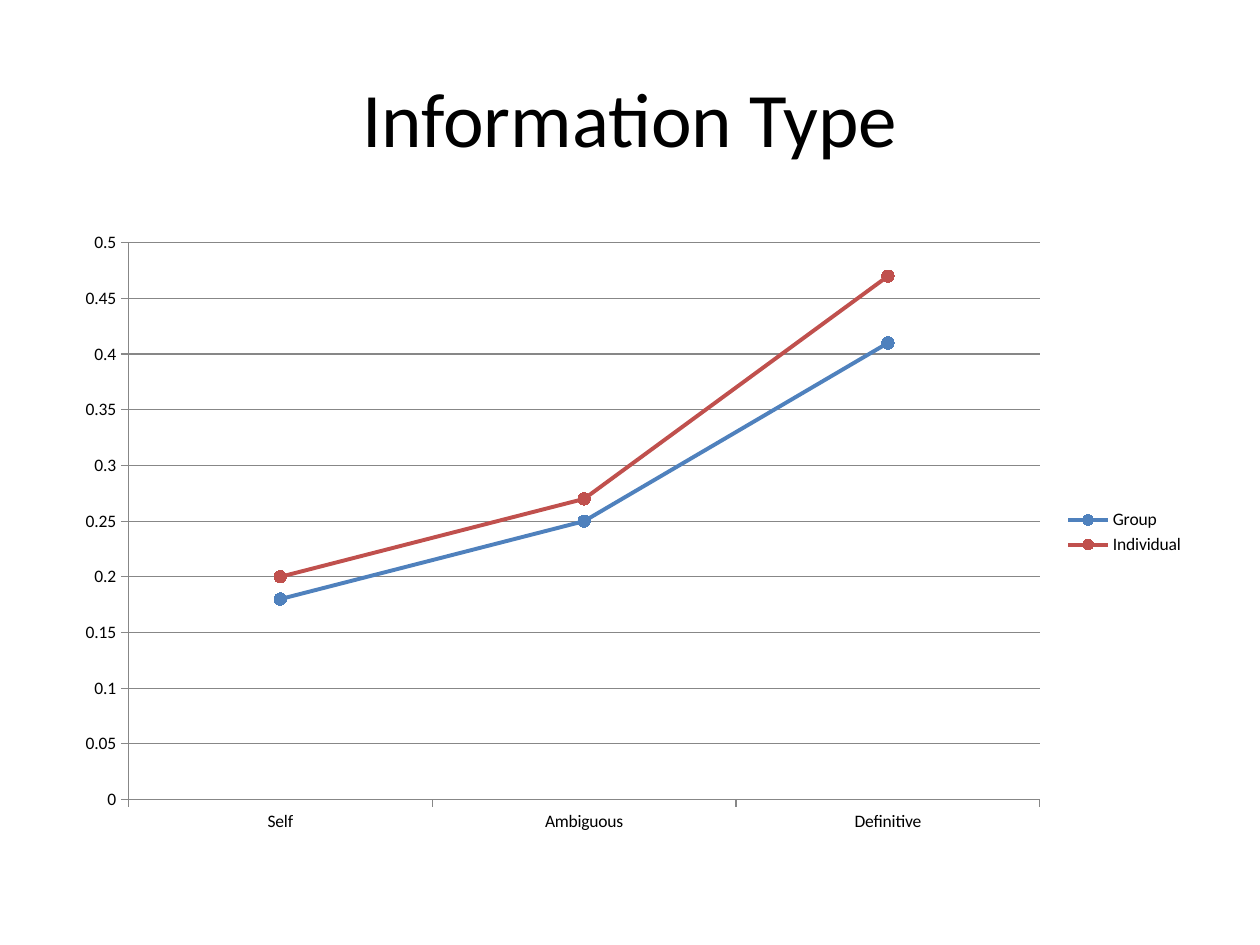
from pptx import Presentation
from pptx.chart.data import CategoryChartData
from pptx.dml.color import RGBColor
from pptx.enum import chart as charts, text
from pptx.util import Pt

TITLE = "Information Type"
CATEGORIES = ["Self", "Ambiguous", "Definitive"]
SERIES = [
    ("Group", [0.18, 0.25, 0.41], "4F81BD"),
    ("Individual", [0.2, 0.27, 0.47], "C0504D"),
]
FONT, BLACK, GRAY = "Calibri", "000000", "878787"
PAGE_WIDTH, PAGE_HEIGHT, MARGIN = 720, 540, 36
CONTENT_WIDTH = PAGE_WIDTH - 2 * MARGIN
TITLE_TOP, TITLE_HEIGHT = 21.6, 90
CHART_TOP, CHART_HEIGHT = 126, 356.4


def paint(color_format, color):
    color_format.rgb = RGBColor.from_string(color)


def set_font(font, size):
    font.name, font.size = FONT, Pt(size)
    paint(font.color, BLACK)


def add_title(page):
    box = page.shapes.add_textbox(Pt(MARGIN), Pt(TITLE_TOP), Pt(CONTENT_WIDTH), Pt(TITLE_HEIGHT))
    frame = box.text_frame
    frame.word_wrap = True
    frame.vertical_anchor = text.MSO_ANCHOR.MIDDLE
    para = frame.paragraphs[0]
    para.text = TITLE
    para.alignment = text.PP_ALIGN.CENTER
    set_font(para.font, 44)


def style_series(series, color):
    series.smooth = False
    series.format.line.width = Pt(2.25)
    paint(series.format.line.color, color)
    marker = series.marker
    marker.style, marker.size = charts.XL_MARKER_STYLE.CIRCLE, 7
    marker.format.fill.solid()
    paint(marker.format.fill.fore_color, color)
    marker.format.line.fill.background()


def add_line_chart(page):
    data = CategoryChartData()
    data.categories = CATEGORIES
    for name, values, _ in SERIES:
        data.add_series(name, values)
    chart = page.shapes.add_chart(
        charts.XL_CHART_TYPE.LINE_MARKERS,
        Pt(MARGIN), Pt(CHART_TOP), Pt(CONTENT_WIDTH), Pt(CHART_HEIGHT), data,
    ).chart
    set_font(chart.font, 10)
    chart.has_title = False
    chart.has_legend = True
    chart.legend.position = charts.XL_LEGEND_POSITION.RIGHT
    chart.legend.include_in_layout = False

    value_axis = chart.value_axis
    value_axis.minimum_scale, value_axis.maximum_scale = 0, 0.5
    value_axis.major_unit = 0.05
    value_axis.has_major_gridlines = True
    for axis in (chart.category_axis, value_axis):
        axis.major_tick_mark = charts.XL_TICK_MARK.OUTSIDE
    for part in (chart.category_axis, value_axis, value_axis.major_gridlines):
        part.format.line.width = Pt(0.75)
        paint(part.format.line.color, GRAY)

    plot = chart.plots[0]
    plot.vary_by_categories = False
    for series, (_, _, color) in zip(plot.series, SERIES):
        style_series(series, color)


def main():
    deck = Presentation()
    deck.slide_width, deck.slide_height = Pt(PAGE_WIDTH), Pt(PAGE_HEIGHT)
    page = deck.slides.add_slide(deck.slide_layouts[6])
    add_title(page)
    add_line_chart(page)
    deck.save("out.pptx")


if __name__ == "__main__":
    main()
